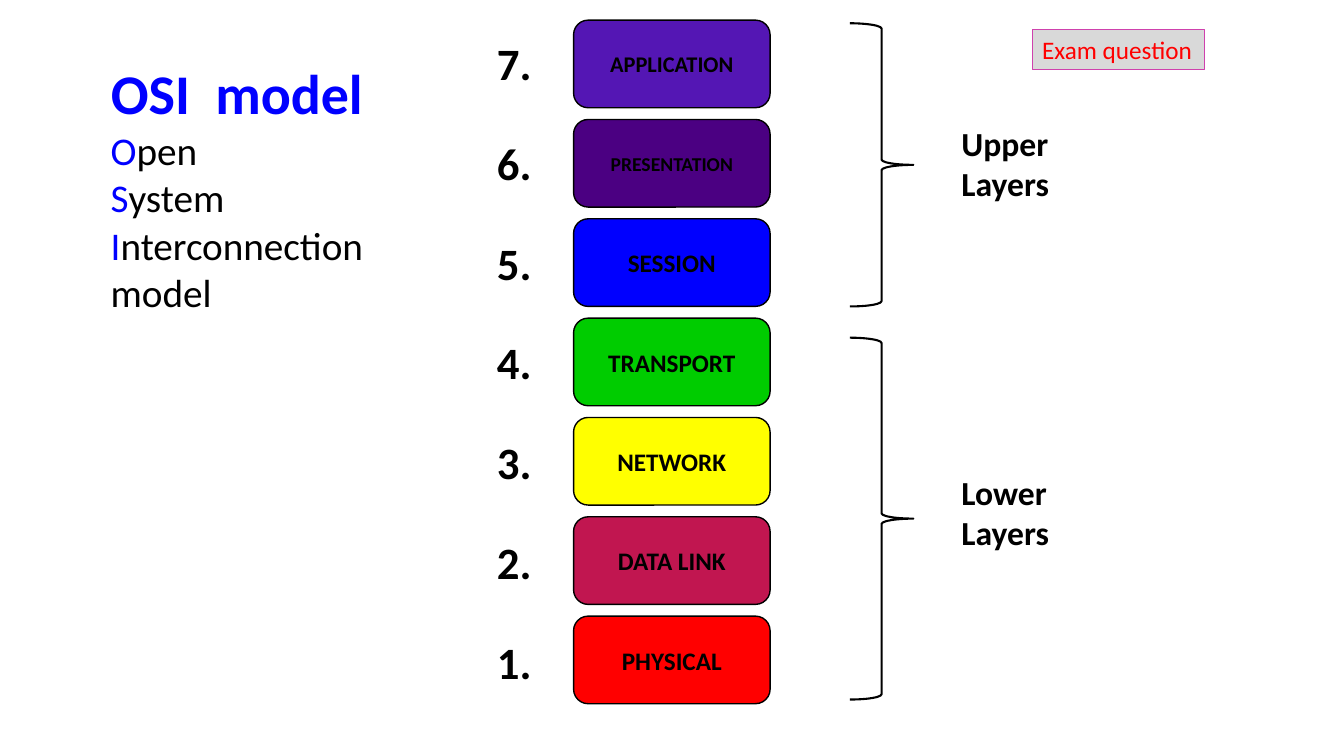
from pptx import Presentation
from pptx.dml.color import RGBColor
from pptx.enum.shapes import MSO_SHAPE
from pptx.enum.text import MSO_ANCHOR, MSO_AUTO_SIZE, PP_ALIGN
from pptx.util import Pt

BLACK, BLUE, RED = "000000", "0000FF", "FF0000"

LAYERS = [
    ("APPLICATION", "5416B4", 16),
    ("PRESENTATION", "4B0082", 14),
    ("SESSION", BLUE, 18),
    ("TRANSPORT", "00CC00", 18),
    ("NETWORK", "FFFF00", 18),
    ("DATA LINK", "C11650", 18),
    ("PHYSICAL", RED, 18),
]
LAYER_TOP, LAYER_PITCH = 14.4, 70.95
NUMBER_TOP, NUMBER_PITCH = 22.3, 71.2

GROUPS = [
    ("Upper", 16.6, 202.3, 84.2),
    ("Lower", 241.2, 258.5, 333.4),
]


def color(hex_code):
    """Turn a hex string into a colour."""
    return RGBColor.from_string(hex_code)


def write(frame, lines, size=18, ink=BLACK, bold=False, font="Calibri",
          align=PP_ALIGN.LEFT, anchor=MSO_ANCHOR.TOP, wrap=False):
    """Fill a frame with lines, each a string or a list of (text, colour) parts."""
    frame.word_wrap = wrap
    frame.vertical_anchor = anchor
    frame.auto_size = MSO_AUTO_SIZE.NONE if wrap else MSO_AUTO_SIZE.SHAPE_TO_FIT_TEXT
    for index, line in enumerate(lines):
        paragraph = frame.add_paragraph() if index else frame.paragraphs[0]
        paragraph.alignment = align
        parts = [(line, ink)] if isinstance(line, str) else line
        for text, part_ink in parts:
            run = paragraph.add_run()
            run.text = text
            run.font.name = font
            run.font.size = Pt(size)
            run.font.bold = bold
            run.font.color.rgb = color(part_ink)


class Board:
    """Hold the slide and its style, and place elements in points."""

    def __init__(self, slide, outline=BLACK):
        """Keep the slide and the default outline colour."""
        self.slide = slide
        self.outline = outline

    def title(self, parts, gap, left, top, width, height, **style):
        """Place the title, with extra spacing after its second part."""
        heading = self.slide.shapes.title
        heading.left, heading.top = Pt(left), Pt(top)
        heading.width, heading.height = Pt(width), Pt(height)
        ink = style["ink"]
        write(heading.text_frame, [[(part, ink) for part in parts]], **style)
        space = heading.text_frame.paragraphs[0].runs[1]
        space.font._element.set("spc", str(gap * 100))

    def label(self, lines, left, top, width, height, **style):
        """Add a text box."""
        label = self.slide.shapes.add_textbox(Pt(left), Pt(top), Pt(width), Pt(height))
        write(label.text_frame, lines, **style)

    def shape(self, kind, left, top, width, height, fill=None, outline=None, weight=1):
        """Add an outlined preset shape and return it."""
        shape = self.slide.shapes.add_shape(kind, Pt(left), Pt(top), Pt(width), Pt(height))
        shape.shadow.inherit = False
        if fill:
            shape.fill.solid()
            shape.fill.fore_color.rgb = color(fill)
        else:
            shape.fill.background()
        shape.line.color.rgb = color(outline or self.outline)
        shape.line.width = Pt(weight)
        return shape

    def box(self, text, left, top, width, height, fill, outline=None, weight=1,
            kind=MSO_SHAPE.RECTANGLE, **style):
        """Add a filled shape with one line of text."""
        box = self.shape(kind, left, top, width, height, fill, outline, weight)
        write(box.text_frame, [text], **style)


def main():
    """Build and save the slide."""
    deck = Presentation()
    deck.slide_width, deck.slide_height = Pt(960), Pt(540)
    board = Board(deck.slides.add_slide(deck.slide_layouts[5]))

    board.title(["OSI", " ", "model"], 9, 72, 38.2, 203.8, 56, size=40, ink=BLUE, bold=True)
    board.label(
        [[(word[0], BLUE), (word[1:], BLACK)] for word in ("Open", "System", "Interconnection")]
        + ["model"],
        72, 87, 203.8, 144, size=28)

    for index, (layer, fill, size) in enumerate(LAYERS):
        board.box(layer, 409.7, LAYER_TOP + index * LAYER_PITCH, 140.4, 62.6, fill,
                  kind=MSO_SHAPE.ROUNDED_RECTANGLE, size=size, bold=True, wrap=True,
                  align=PP_ALIGN.CENTER, anchor=MSO_ANCHOR.MIDDLE)
        board.label([f"{len(LAYERS) - index}."], 347.8, NUMBER_TOP + index * NUMBER_PITCH,
                    39.6, 46.1, size=32, bold=True)

    for group, brace_top, brace_height, label_top in GROUPS:
        board.shape(MSO_SHAPE.RIGHT_BRACE, 607, brace_top, 45.4, brace_height, weight=1.5)
        board.label([group, "Layers"], 679.7, label_top, 77.8, 65.5, size=24, bold=True)

    board.box("Exam question", 737.3, 20.9, 123.1, 29.1, "D9D9D9", "CF41AD", 0.75, ink=RED)
    deck.save("out.pptx")


if __name__ == "__main__":
    main()
